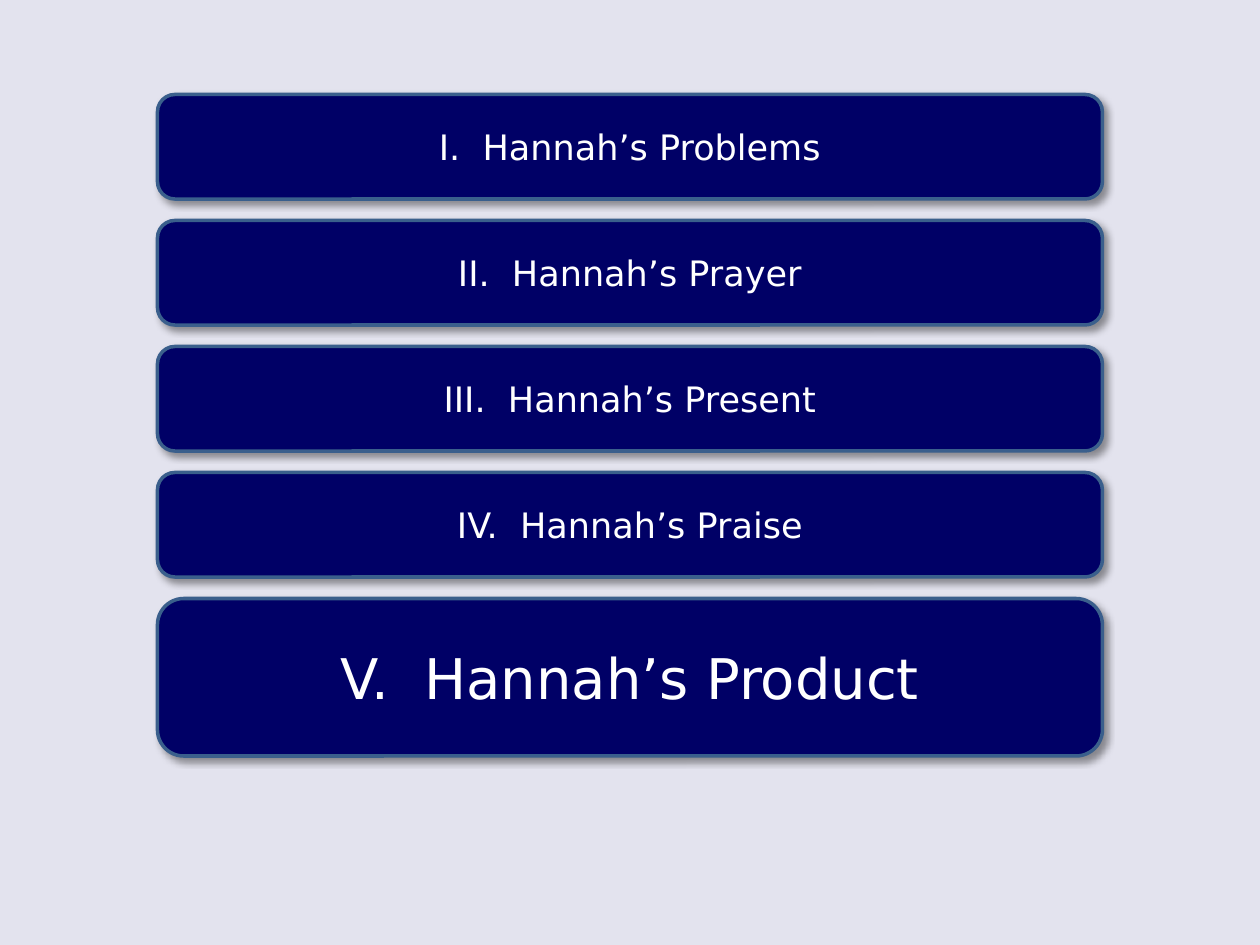
from lxml import etree
from pptx import Presentation
from pptx.dml.color import RGBColor
from pptx.enum.shapes import MSO_SHAPE as Shape
from pptx.enum.text import MSO_ANCHOR as Anchor, PP_ALIGN as Align
from pptx.oxml.ns import qn
from pptx.util import Inches, Pt

NAVY, STEEL, WHITE, PALE = "000066", "3A5F8C", "FFFFFF", "E3E3EE"
FONT = "DejaVu Sans"

LEFT, TOP, WIDTH = 1.25, 0.75, 7.5
PITCH = 1.0
POINTS = [
    "I.  Hannah’s Problems",
    "II.  Hannah’s Prayer",
    "III.  Hannah’s Present",
    "IV.  Hannah’s Praise",
    "V.  Hannah’s Product",
]


def color(value):
    return RGBColor.from_string(value)


def add_shadow(shape, value="000000", opacity=40, blur=4, distance=3, angle=45):
    shape.shadow.inherit = False
    effects = shape._element.spPr.find(qn("a:effectLst"))
    shadow = etree.SubElement(
        effects, qn("a:outerShdw"), blurRad=str(Pt(blur)), dist=str(Pt(distance)),
        dir=str(angle * 60000), algn="tl", rotWithShape="0")
    tint = etree.SubElement(shadow, qn("a:srgbClr"), val=value)
    etree.SubElement(tint, qn("a:alpha"), val=str(opacity * 1000))


def set_text(shape, text, size=20, font=FONT, fill=WHITE, align=Align.CENTER):
    frame = shape.text_frame
    frame.word_wrap = True
    frame.vertical_anchor = Anchor.MIDDLE
    paragraph = frame.paragraphs[0]
    paragraph.alignment = align
    run = paragraph.add_run()
    run.text = text
    run.font.size = Pt(size)
    run.font.name = font
    run.font.color.rgb = color(fill)


def add_bar(slide, top, height, text, size):
    shape = slide.shapes.add_shape(
        Shape.ROUNDED_RECTANGLE, Inches(LEFT), Inches(top), Inches(WIDTH), Inches(height))
    shape.fill.solid()
    shape.fill.fore_color.rgb = color(NAVY)
    shape.line.color.rgb = color(STEEL)
    shape.line.width = Pt(2)
    add_shadow(shape)
    set_text(shape, text, size=size)


def main():
    presentation = Presentation()
    presentation.slide_width = Inches(10)
    presentation.slide_height = Inches(7.5)
    slide = presentation.slides.add_slide(presentation.slide_layouts[6])

    # Pale navy tint behind everything
    slide.background.fill.solid()
    slide.background.fill.fore_color.rgb = color(PALE)

    # Outline bars; the last one, the current point, is larger
    for index, text in enumerate(POINTS):
        current = index == len(POINTS) - 1
        height, size = (1.25, 32) if current else (0.83, 20)
        add_bar(slide, TOP + index * PITCH, height, text, size)

    presentation.save("out.pptx")


if __name__ == "__main__":
    main()
